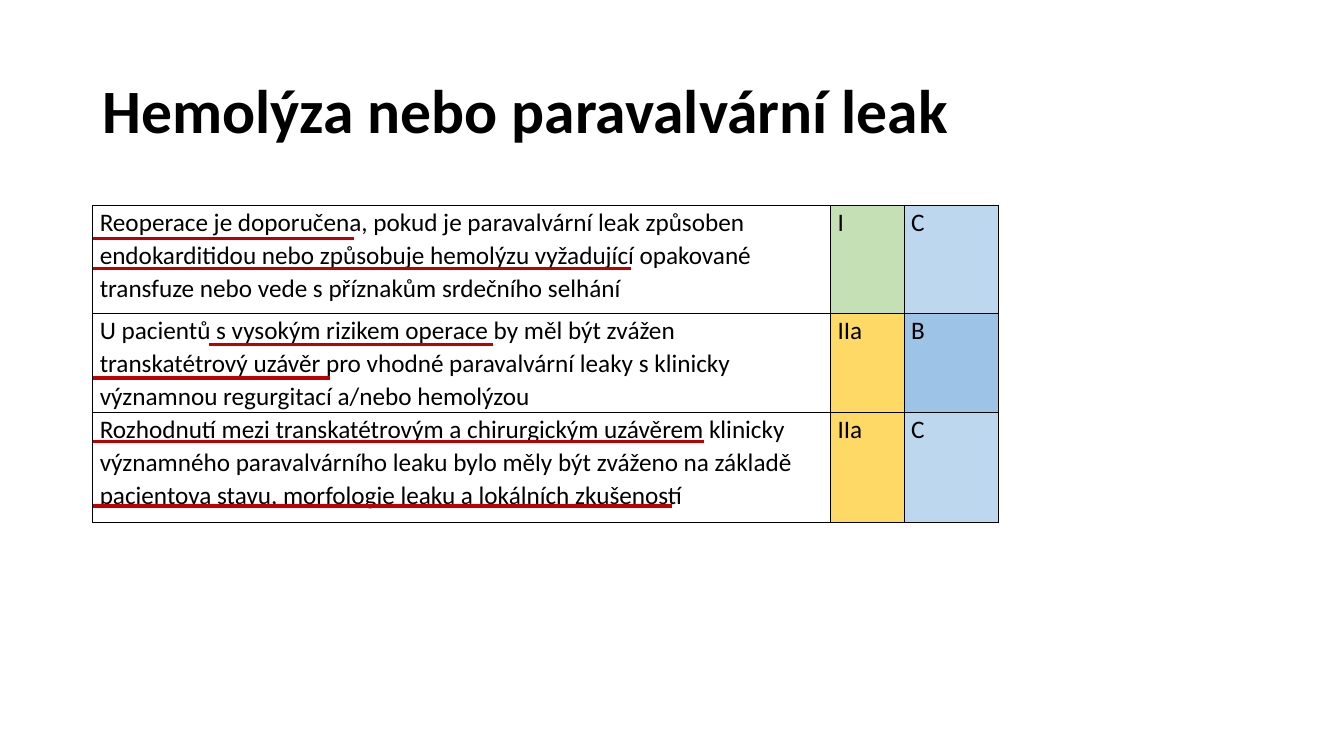
from dataclasses import dataclass

from lxml.etree import SubElement
from pptx import Presentation
from pptx.dml.color import RGBColor as Rgb
from pptx.enum.shapes import MSO_CONNECTOR as Connector
from pptx.enum.text import MSO_ANCHOR as Anchor, MSO_AUTO_SIZE as AutoSize, PP_ALIGN as Align
from pptx.oxml.ns import qn
from pptx.slide import Slide
from pptx.table import _Cell as Cell
from pptx.text.text import _Paragraph as Paragraph
from pptx.util import Inches, Length, Pt


@dataclass(frozen=True)
class Theme:
    font: str = "Calibri"
    title_size: float = 44
    body_size: float = 18
    rule_width: float = 2.25
    border_width: float = 1
    ink: str = "000000"
    rule: str = "C00000"


@dataclass(frozen=True)
class Grid:
    columns: float = 133.33
    rows: float = 75
    width: Length = Inches(13.33)
    height: Length = Inches(7.5)

    def x(self, columns: float) -> Length:
        return Length(round(self.width * columns / self.columns))

    def y(self, rows: float) -> Length:
        return Length(round(self.height * rows / self.rows))


@dataclass(frozen=True)
class Underline:
    level: float
    end: float
    start: float = 9.2


@dataclass(frozen=True)
class Recommendation:
    statement: str
    grade: str
    evidence: str
    height: float
    underlines: tuple[Underline, ...]


THEME = Theme()
GRID = Grid()
LEFT = 9.2
TABLE_TOP = 20.4
COLUMN_WIDTHS = (73.2, 7.3, 9.4)
GRADE_FILLS = {"I": "C5E0B4", "IIa": "FFD966"}
EVIDENCE_FILLS = {"B": "9DC3E6", "C": "BDD7EE"}
HEADING = "Hemolýza nebo paravalvární leak"
RECOMMENDATIONS = (
    Recommendation(
        "Reoperace je doporučena, pokud je paravalvární leak způsoben endokarditidou "
        "nebo způsobuje hemolýzu vyžadující opakované transfuze nebo vede "
        "s příznakům srdečního selhání",
        "I", "C", 10.7,
        (Underline(26.6, 62.6), Underline(23.7, 35.1)),
    ),
    Recommendation(
        "U pacientů s vysokým rizikem operace by měl být zvážen transkatétrový uzávěr "
        "pro vhodné paravalvární leaky s klinicky významnou regurgitací a/nebo hemolýzou",
        "IIa", "B", 9.8,
        (Underline(34.2, 48.9, start=20.7), Underline(37.5, 32.7)),
    ),
    Recommendation(
        "Rozhodnutí mezi transkatétrovým a chirurgickým uzávěrem klinicky významného "
        "paravalvárního leaku bylo měly být zváženo na základě pacientova stavu, "
        "morfologie leaku a lokálních zkušeností",
        "IIa", "C", 10.9,
        (Underline(43.8, 69.8), Underline(50.2, 66.7)),
    ),
)


def write(paragraph: Paragraph, text: str, size: float, spacing: float, bold: bool = False) -> None:
    paragraph.alignment = Align.LEFT
    paragraph.line_spacing = spacing
    run = paragraph.add_run()
    run.text = text
    run.font.name = THEME.font
    run.font.size = Pt(size)
    run.font.bold = bold
    run.font.color.rgb = Rgb.from_string(THEME.ink)


def add_heading(slide: Slide) -> None:
    heading = slide.shapes.title
    heading.left, heading.top = GRID.x(LEFT), GRID.y(4)
    heading.width, heading.height = GRID.x(115), GRID.y(14.5)
    frame = heading.text_frame
    frame.word_wrap = True
    frame.auto_size = AutoSize.NONE
    frame.vertical_anchor = Anchor.MIDDLE
    write(frame.paragraphs[0], HEADING, THEME.title_size, 0.9, bold=True)


def add_borders(cell: Cell) -> None:
    properties = cell._tc.get_or_add_tcPr()
    for side in ("a:lnL", "a:lnR", "a:lnT", "a:lnB"):
        border = SubElement(properties, qn(side), w=str(Pt(THEME.border_width)))
        SubElement(SubElement(border, qn("a:solidFill")), qn("a:srgbClr"), val=THEME.ink)


def fill_cell(cell: Cell, text: str, color: str | None) -> None:
    cell.margin_left = cell.margin_right = GRID.x(0.7)
    cell.margin_top = cell.margin_bottom = 0
    cell.vertical_anchor = Anchor.TOP
    add_borders(cell)
    if color:
        cell.fill.solid()
        cell.fill.fore_color.rgb = Rgb.from_string(color)
    else:
        cell.fill.background()
    write(cell.text_frame.paragraphs[0], text, THEME.body_size, 1.07)


def add_recommendations(slide: Slide) -> None:
    table = slide.shapes.add_table(
        len(RECOMMENDATIONS), len(COLUMN_WIDTHS), GRID.x(LEFT), GRID.y(TABLE_TOP),
        GRID.x(sum(COLUMN_WIDTHS)), GRID.y(sum(item.height for item in RECOMMENDATIONS)),
    ).table
    table.first_row = table.horz_banding = False
    for column, width in zip(table.columns, COLUMN_WIDTHS):
        column.width = GRID.x(width)
    for row, item in zip(table.rows, RECOMMENDATIONS):
        row.height = GRID.y(item.height)
        entries = (
            (item.statement, None),
            (item.grade, GRADE_FILLS[item.grade]),
            (item.evidence, EVIDENCE_FILLS[item.evidence]),
        )
        for cell, (text, color) in zip(row.cells, entries):
            fill_cell(cell, text, color)


def add_underline(slide: Slide, underline: Underline) -> None:
    level = GRID.y(underline.level)
    rule = slide.shapes.add_connector(
        Connector.STRAIGHT, GRID.x(underline.start), level, GRID.x(underline.end), level
    )
    rule.line.color.rgb = Rgb.from_string(THEME.rule)
    rule.line.width = Pt(THEME.rule_width)
    SubElement(rule._element.spPr, qn("a:effectLst"))


def main() -> None:
    deck = Presentation()
    deck.slide_width, deck.slide_height = GRID.width, GRID.height
    slide = deck.slides.add_slide(deck.slide_layouts.get_by_name("Title Only"))
    add_heading(slide)
    add_recommendations(slide)
    for item in RECOMMENDATIONS:
        for underline in item.underlines:
            add_underline(slide, underline)
    deck.save("out.pptx")


if __name__ == "__main__":
    main()
